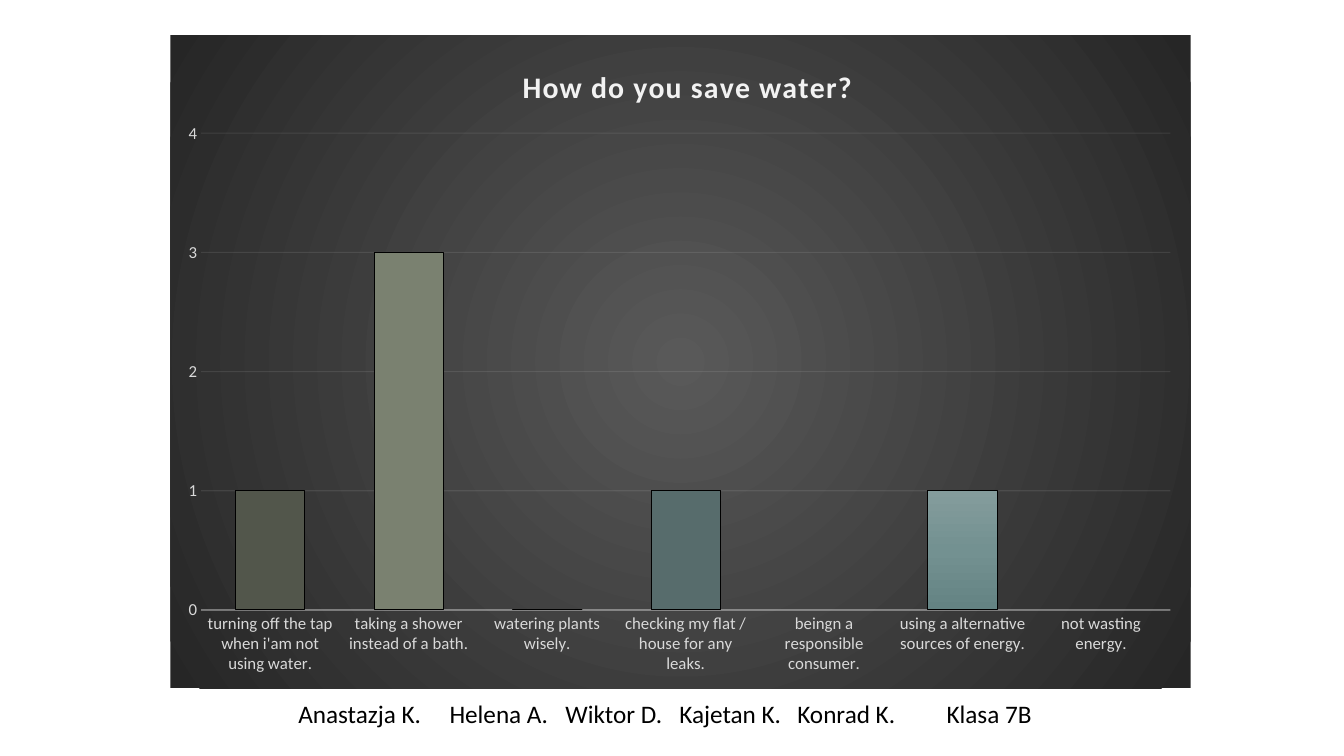
from dataclasses import dataclass

from lxml import etree
from pptx import Presentation
from pptx.chart import data as chart_data
from pptx.dml.color import RGBColor
from pptx.enum import chart as chart_enum
from pptx.enum import text
from pptx.oxml import parse_xml
from pptx.oxml.ns import nsdecls, qn
from pptx.util import Inches, Pt


@dataclass(frozen=True)
class Theme:
    font: str = "Calibri"
    ink: str = "000000"
    pale: str = "F2F2F2"
    label: str = "D9D9D9"
    backdrop: tuple = ((0, "595959"), (100, "262626"))
    bar: tuple = ((0, "849C9C"), (50, "739191"), (100, "648383"))
    title_size: float = 21.28
    label_size: float = 12
    body_size: float = 18


def gradient(stops, direction):
    marks = "".join(
        f'<a:gs pos="{place * 1000}"><a:srgbClr val="{colour}"/></a:gs>'
        for place, colour in stops)
    return parse_xml(f'<a:gradFill {nsdecls("a")} rotWithShape="1">'
                     f'<a:gsLst>{marks}</a:gsLst>{direction}</a:gradFill>')


LINEAR_DOWN = '<a:lin ang="5400000" scaled="0"/>'
FROM_CENTRE = ('<a:path path="circle"><a:fillToRect l="50000" t="50000" '
               'r="50000" b="50000"/></a:path>')


class SlideBuilder:
    def __init__(self, page, theme):
        self.page = page
        self.theme = theme

    def style_font(self, font, size, colour, bold=False):
        font.name = self.theme.font
        font.size = Pt(size)
        font.bold = bold
        font.color.rgb = RGBColor.from_string(colour)

    def style_line(self, line, colour, width, opacity=100):
        line.width = Pt(width)
        line.color.rgb = RGBColor.from_string(colour)
        if opacity < 100:
            for tint in line._ln.iter(qn("a:srgbClr")):
                etree.SubElement(tint, qn("a:alpha")).set("val", str(opacity * 1000))

    def place(self, element, index, **fractions):
        """Set the manual layout of a chart part, in fractions of the chart."""
        for old in element.findall(qn("c:layout")):
            element.remove(old)
        target = '<c:layoutTarget val="inner"/>' if "w" in fractions else ""
        modes = "".join(f'<c:{key}Mode val="edge"/>' for key in "xy")
        values = "".join(f'<c:{key} val="{value}"/>' for key, value in fractions.items())
        element.insert(index, parse_xml(
            f'<c:layout {nsdecls("c")}><c:manualLayout>{target}{modes}{values}'
            '</c:manualLayout></c:layout>'))

    def column_chart(self, area, answers, point_colours, title):
        theme = self.theme
        table = chart_data.CategoryChartData()
        table.categories = list(answers)
        table.add_series("Series 1", list(answers.values()))
        chart = self.page.shapes.add_chart(
            chart_enum.XL_CHART_TYPE.COLUMN_CLUSTERED,
            *[Inches(length) for length in area], table).chart
        chart.has_legend = False
        self.style_font(chart.font, 10, theme.ink)

        # Dark backdrop
        backdrop = parse_xml(f'<c:spPr {nsdecls("c", "a")}><a:ln><a:noFill/></a:ln></c:spPr>')
        backdrop.insert(0, gradient(theme.backdrop, FROM_CENTRE))
        chart._chartSpace.chart.addnext(backdrop)

        # Title
        chart.has_title = True
        span = chart.chart_title.text_frame.paragraphs[0].add_run()
        span.text = title
        self.style_font(span.font, theme.title_size, theme.pale, bold=True)
        span.font._element.set("spc", "100")
        self.place(chart.chart_title._element, 1, x=0.34, y=0.04)
        self.place(chart._chartSpace.chart.plotArea, 0, x=0.03, y=0.15, w=0.95, h=0.73)

        # Axes
        for axis in (chart.category_axis, chart.value_axis):
            axis.major_tick_mark = axis.minor_tick_mark = chart_enum.XL_TICK_MARK.NONE
            self.style_font(axis.tick_labels.font, theme.label_size, theme.label)
        self.style_line(chart.category_axis.format.line, theme.pale, 1, opacity=54)
        scale = chart.value_axis
        scale.minimum_scale, scale.maximum_scale, scale.major_unit = 0, 4, 1
        scale.format.line.fill.background()
        self.style_line(scale.major_gridlines.format.line, theme.pale, 0.75, opacity=10)

        # Bars
        plot = chart.plots[0]
        plot.gap_width, plot.overlap, plot.vary_by_categories = 100, -24, False
        series = plot.series[0]
        series.invert_if_negative = False
        self.style_line(series.format.line, theme.ink, 0.75)
        series._element.get_or_add_spPr().insert(0, gradient(theme.bar, LINEAR_DOWN))
        for index, colour in point_colours.items():
            look = series.points[index].format
            look.fill.solid()
            look.fill.fore_color.rgb = RGBColor.from_string(colour)
            self.style_line(look.line, theme.ink, 0.75)

    def tabbed_line(self, area, entries):
        """Write one line of entries, given as a start in inches and a wording."""
        box = self.page.shapes.add_textbox(*[Inches(length) for length in area])
        frame = box.text_frame
        frame.word_wrap = True
        frame.auto_size = text.MSO_AUTO_SIZE.SHAPE_TO_FIT_TEXT
        para = frame.paragraphs[0]
        stops = etree.SubElement(para._p.get_or_add_pPr(), qn("a:tabLst"))
        for start, wording in entries:
            if start:
                stop = etree.SubElement(stops, qn("a:tab"))
                stop.set("pos", str(Inches(start)))
                stop.set("algn", "l")
            span = para.add_run()
            span.text = "\t" + wording if start else wording
            self.style_font(span.font, self.theme.body_size, self.theme.ink)


def main():
    deck = Presentation()
    deck.slide_width, deck.slide_height = Inches(13.33), Inches(7.5)
    builder = SlideBuilder(deck.slides.add_slide(deck.slide_layouts[6]), Theme())

    # Survey chart
    answers = {
        "turning off the tap when i'am not using water.": 1,
        "taking a shower instead of a bath.": 3,
        "watering plants wisely.": 0,
        "checking my flat / house for any leaks.": 1,
        "beingn a responsible consumer.": None,
        "using a alternative sources of energy.": 1,
        "not wasting energy.": None,
    }
    builder.column_chart((1.69, 0.35, 10.12, 6.48), answers,
                         {0: "52564B", 1: "7A8170", 3: "576C6C"},
                         "How do you save water?")

    # Authors and class
    builder.tabbed_line((2.86, 6.88, 8.25, 0.4), [
        (0, "Anastazja K."), (1.5, "Helena A."), (2.65, "Wiktor D."),
        (3.78, "Kajetan K."), (4.95, "Konrad K."), (6.43, "Klasa 7B")])

    deck.save("out.pptx")


if __name__ == "__main__":
    main()
